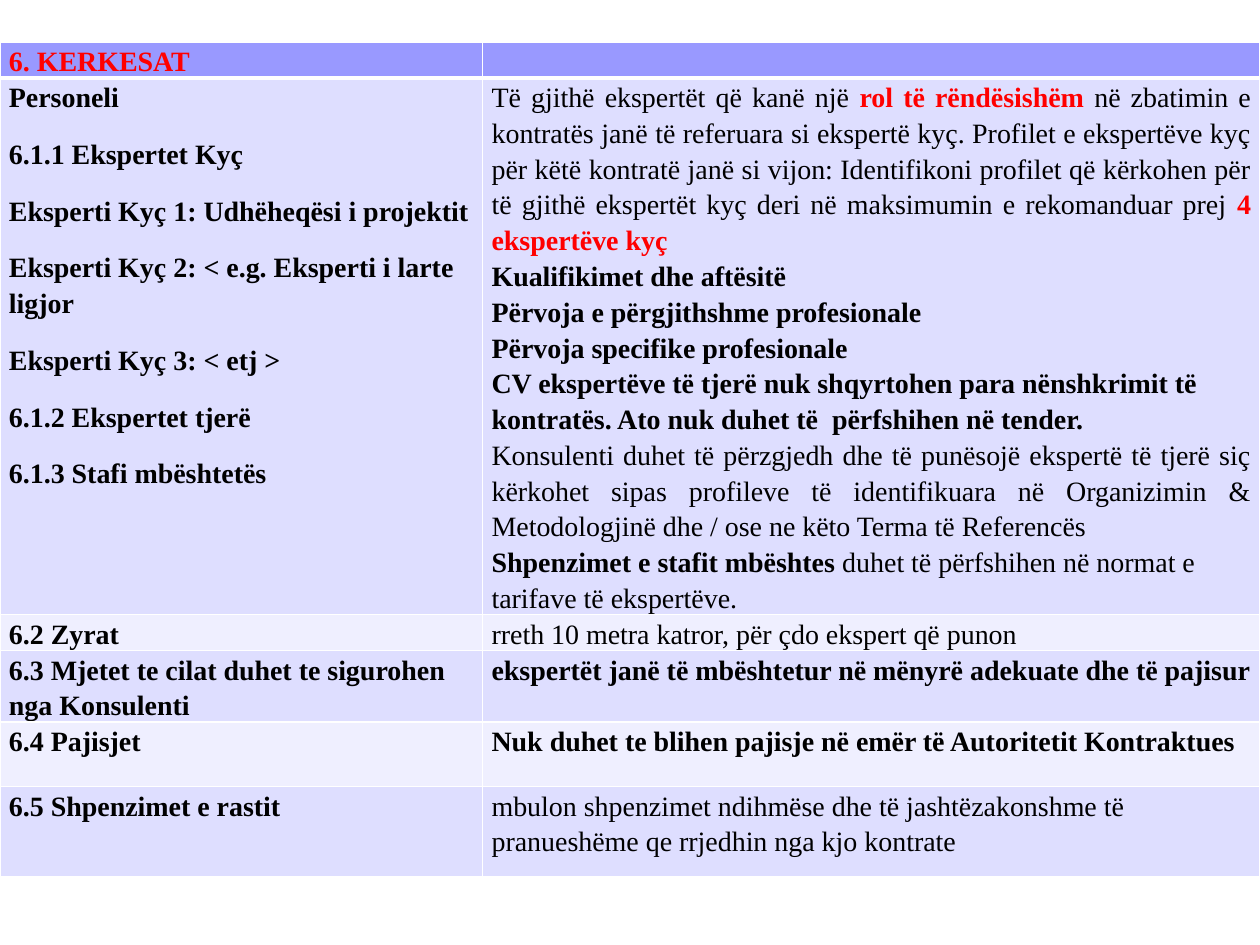
from lxml.etree import SubElement
from pptx import Presentation
from pptx.dml.color import RGBColor
from pptx.enum.text import PP_ALIGN
from pptx.oxml.ns import qn
from pptx.util import Cm, Pt

HUES = {"head": "9999FF", "dark": "DEDEFF", "light": "EFEFFF",
        "line": "FFFFFF", "text": "000000", "red": "FF0000"}
FONT, SIZE = "Times New Roman", 16
LEFT, JUST = PP_ALIGN.LEFT, PP_ALIGN.JUSTIFY
STYLES = {"bold": (True, "text"), "plain": (False, "text"), "red": (True, "red")}

STAFF = ["Personeli", "6.1.1 Ekspertet Kyç",
         "Eksperti Kyç 1: Udhëheqësi i projektit",
         "Eksperti Kyç 2: < e.g. Eksperti i larte ligjor",
         "Eksperti Kyç 3: < etj >", "6.1.2 Ekspertet tjerë",
         "6.1.3 Stafi mbështetës"]
RULES = [
    (JUST, [("Të gjithë ekspertët që kanë një ", "plain"),
            ("rol të rëndësishëm", "red"),
            (" në zbatimin e kontratës janë të referuara si ekspertë kyç. "
             "Profilet e ekspertëve kyç për këtë kontratë janë si vijon: "
             "Identifikoni profilet që kërkohen për të gjithë ekspertët kyç "
             "deri në maksimumin e rekomanduar prej ", "plain"),
            ("4 ekspertëve kyç", "red")]),
    (LEFT, [("Kualifikimet dhe aftësitë", "bold")]),
    (LEFT, [("Përvoja e përgjithshme profesionale", "bold")]),
    (LEFT, [("Përvoja specifike profesionale", "bold")]),
    (LEFT, [("CV ekspertëve të tjerë nuk shqyrtohen para nënshkrimit të "
             "kontratës. Ato nuk duhet të  përfshihen në tender.", "bold")]),
    (JUST, [("Konsulenti duhet të përzgjedh dhe të punësojë ekspertë të tjerë "
             "siç kërkohet sipas profileve të identifikuara në Organizimin & "
             "Metodologjinë dhe / ose ne këto Terma të Referencës", "plain")]),
    (LEFT, [("Shpenzimet e stafit mbështes", "bold"),
            (" duhet të përfshihen në normat e tarifave të ekspertëve.", "plain")]),
]


def line(text, style="bold"):
    return [(LEFT, [(text, style)])]


ROWS = [
    (0.71, "head", line("6. KERKESAT", "red"), []),
    (10.74, "dark", [(LEFT, [(text, "bold")]) for text in STAFF], RULES),
    (0.71, "light", line("6.2 Zyrat"),
     line("rreth 10 metra katror, për çdo ekspert që punon", "plain")),
    (1.42, "dark", line("6.3 Mjetet te cilat duhet te sigurohen nga Konsulenti"),
     line("ekspertët janë të mbështetur në mënyrë adekuate dhe të pajisur")),
    (1.3, "light", line("6.4 Pajisjet"),
     line("Nuk duhet te blihen pajisje në emër të Autoritetit Kontraktues")),
    (1.83, "dark", line("6.5 Shpenzimet e rastit"),
     line("mbulon shpenzimet ndihmëse dhe të jashtëzakonshme të "
          "pranueshëme qe rrjedhin nga kjo kontrate", "plain")),
]
COLS = [9.73, 15.67]


def write(cell, paras, gap):
    frame = cell.text_frame
    for i, (align, runs) in enumerate(paras):
        para = frame.add_paragraph() if i else frame.paragraphs[0]
        para.alignment = align
        para.line_spacing = 1.15
        para.space_before = Pt(gap if i else 0)
        for text, style in runs:
            run = para.add_run()
            run.text = text
            font = run.font
            font.name, font.size = FONT, Pt(SIZE)
            font.bold, hue = STYLES[style]
            font.color.rgb = RGBColor.from_string(HUES[hue])
    if not paras:
        end = SubElement(frame.paragraphs[0]._p, qn("a:endParaRPr"))
        end.set("sz", str(SIZE * 100))


def edge(cell, sides):
    props = cell._tc.get_or_add_tcPr()
    for side, width in sides.items():
        rule = SubElement(props, qn("a:ln" + side), w=str(Pt(width)))
        fill = SubElement(rule, qn("a:solidFill"))
        SubElement(fill, qn("a:srgbClr"), val=HUES["line"])


deck = Presentation()
deck.slide_width, deck.slide_height = Cm(25.4), Cm(19.05)
slide = deck.slides.add_slide(deck.slide_layouts[6])
total = sum(row[0] for row in ROWS)
table = slide.shapes.add_table(len(ROWS), len(COLS), Cm(0), Cm(0.85),
                               Cm(sum(COLS)), Cm(total)).table
for col, width in zip(table.columns, COLS):
    col.width = Cm(width)
for r, (height, hue, *cells) in enumerate(ROWS):
    table.rows[r].height = Cm(height)
    for c, paras in enumerate(cells):
        cell = table.cell(r, c)
        cell.margin_left = cell.margin_right = Cm(0.18)
        cell.margin_top = cell.margin_bottom = Cm(0)
        edge(cell, {"L": 1, "R": 1, "T": 3 if r == 1 else 1, "B": 3 if r == 0 else 1})
        cell.fill.solid()
        cell.fill.fore_color.rgb = RGBColor.from_string(HUES[hue])
        write(cell, paras, 0 if c else 12)
deck.save("out.pptx")
